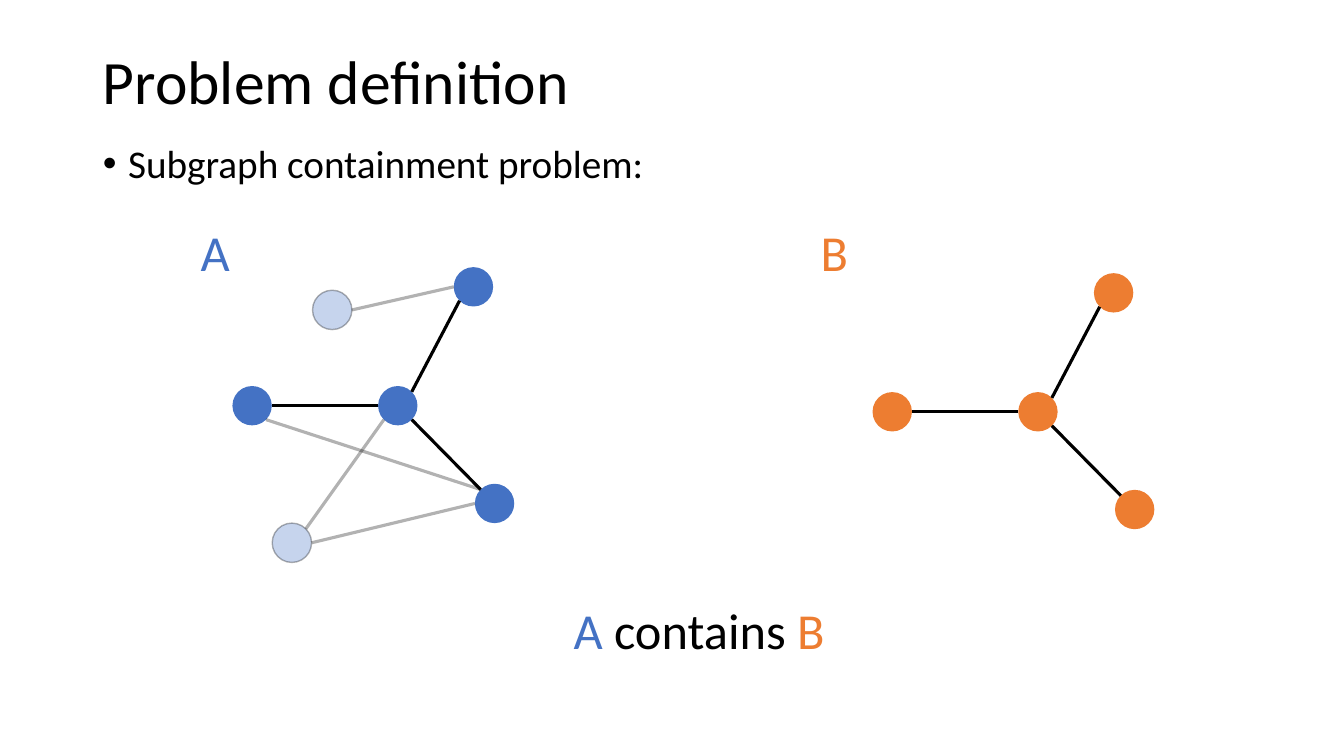
from dataclasses import dataclass
from math import sqrt

from lxml import etree
from pptx import Presentation
from pptx import util as u
from pptx.dml.color import RGBColor
from pptx.enum import shapes, text
from pptx.oxml.ns import qn


@dataclass(frozen=True)
class Theme:
    """Colours, type sizes and line weights of the slide."""
    font: str = "Calibri"
    ink: str = "000000"
    a: str = "4472C4"
    b: str = "ED7D31"
    title: int = 44
    body: int = 28
    label: int = 36
    edge: float = 2.25
    outline: float = 1
    faint: int = 30
    node: float = 2.93


LEAVES = {"hub": (0, 0), "down": (7.2, 12.93), "left": (-10.84, 0), "up": (5.63, -15.73)}
EXTRAS = {"low": (-7.88, 18.13), "high": (-4.88, -12.67)}
STAR_EDGES = [("hub", "NE", "up", "SW"), ("hub", "SE", "down", "NW"), ("left", "E", "hub", "W")]
EXTRA_EDGES = [("hub", "SW", "low", "NE"), ("down", "W", "low", "E"),
               ("left", "SE", "down", "NW"), ("high", "E", "up", "W")]
DIRECTIONS = {"E": (1, 0), "W": (-1, 0), "NE": (1, -1), "SE": (1, 1), "SW": (-1, 1), "NW": (-1, -1)}


def assign(target, values):
    """Set each named attribute on the target."""
    for name, value in values.items():
        setattr(target, name, value)


def fade(fill, percent):
    """Give a solid fill the stated opacity."""
    color = fill._xPr.find(qn("a:solidFill"))[0]
    etree.SubElement(color, qn("a:alpha"), val=str(percent * 1000))


class Slide:
    """Draws on one slide, with lengths in percent of its width and height."""

    def __init__(self, prs, theme):
        """Add a title-and-content slide."""
        self.prs, self.theme = prs, theme
        self.slide = prs.slides.add_slide(prs.slide_layouts[1])

    def x(self, share):
        """Turn a share of the width into a length."""
        return u.Emu(round(self.prs.slide_width * share / 100))

    def y(self, share):
        """Turn a share of the height into a length."""
        return u.Emu(round(self.prs.slide_height * share / 100))

    def box(self, left, top, width, height):
        """Return the four lengths of a box."""
        return self.x(left), self.y(top), self.x(width), self.y(height)

    def add_runs(self, p, runs, size):
        """Add coloured runs to a paragraph."""
        for words, color in runs:
            r = p.add_run()
            r.text = words
            assign(r.font, {"name": self.theme.font, "size": u.Pt(size), "bold": False})
            r.font.color.rgb = RGBColor.from_string(color)

    def placeholder(self, idx, box, words, size, frame, paragraph):
        """Place, fill and format a template placeholder."""
        sp = self.slide.placeholders[idx]
        assign(sp, dict(zip(("left", "top", "width", "height"), self.box(*box))))
        assign(sp.text_frame, {"auto_size": text.MSO_AUTO_SIZE.NONE, **frame})
        p = sp.text_frame.paragraphs[0]
        assign(p, {"alignment": text.PP_ALIGN.LEFT, "line_spacing": 0.9, **paragraph})
        self.add_runs(p, [(words, self.theme.ink)], size)
        return p

    def title(self, box, words):
        """Fill the title."""
        self.placeholder(0, box, words, self.theme.title,
                         {"vertical_anchor": text.MSO_ANCHOR.MIDDLE}, {})

    def bullet(self, box, words):
        """Fill the body with one bulleted line."""
        p = self.placeholder(1, box, words, self.theme.body,
                             {"vertical_anchor": text.MSO_ANCHOR.TOP}, {"space_before": u.Pt(10)})
        pPr = p._p.get_or_add_pPr()
        pPr.set("marL", str(u.Inches(0.25)))
        pPr.set("indent", str(-u.Inches(0.25)))
        etree.SubElement(pPr, qn("a:buChar"), char="•")

    def label(self, box, runs):
        """Add a text box of coloured runs."""
        tf = self.slide.shapes.add_textbox(*self.box(*box)).text_frame
        assign(tf, {"word_wrap": True, "auto_size": text.MSO_AUTO_SIZE.SHAPE_TO_FIT_TEXT})
        self.add_runs(tf.paragraphs[0], runs, self.theme.label)

    def node(self, center, color, faint):
        """Add a round node about its centre."""
        size = self.x(self.theme.node)
        left, top = self.x(center[0]) - size // 2, self.y(center[1]) - size // 2
        sp = self.slide.shapes.add_shape(shapes.MSO_SHAPE.OVAL, left, top, size, size)
        sp.shadow.inherit = False
        sp.fill.solid()
        sp.fill.fore_color.rgb = RGBColor.from_string(color)
        if faint:
            fade(sp.fill, self.theme.faint)
            self.stroke(sp.line, self.theme.outline, faint)
        else:
            sp.line.fill.background()

    def stroke(self, line, weight, faint):
        """Style a line, faded if faint."""
        line.width = u.Pt(weight)
        line.color.rgb = RGBColor.from_string(self.theme.ink)
        if faint:
            fade(line.fill, self.theme.faint)

    def rim(self, center, direction):
        """Find the point of a node's rim in a compass direction."""
        dx, dy = DIRECTIONS[direction]
        reach = self.x(self.theme.node) / 2 / sqrt(dx * dx + dy * dy)
        return (u.Emu(round(self.x(center[0]) + dx * reach)),
                u.Emu(round(self.y(center[1]) + dy * reach)))

    def edge(self, start, end, faint):
        """Join two rim points by a straight line."""
        sp = self.slide.shapes.add_connector(shapes.MSO_CONNECTOR.STRAIGHT, *start, *end)
        self.stroke(sp.line, self.theme.edge, faint)
        etree.SubElement(sp._element.spPr, qn("a:effectLst"))

    def graph(self, hub, color, offsets, links, faint=False, anchors=()):
        """Draw nodes placed about a hub, then the edges between them."""
        centers = {name: (hub[0] + dx, hub[1] + dy)
                   for name, (dx, dy) in {**dict(anchors), **offsets}.items()}
        for name in offsets:
            self.node(centers[name], color, faint)
        for first, leave, second, arrive in links:
            self.edge(self.rim(centers[first], leave), self.rim(centers[second], arrive), faint)


def main():
    """Build and save the slide."""
    prs = Presentation()
    assign(prs, {"slide_width": u.Inches(13.33), "slide_height": u.Inches(7.5)})
    theme = Theme()
    s = Slide(prs, theme)
    s.title((6.9, 5.33, 86.27, 11.73), "Problem definition")
    s.bullet((6.9, 18.4, 86.27, 7.73), "Subgraph containment problem:")
    hub_a, hub_b = (29.6, 53.67), (77.23, 54.47)
    s.graph(hub_b, theme.b, LEAVES, STAR_EDGES)
    s.graph(hub_a, theme.a, LEAVES, STAR_EDGES)
    s.graph(hub_a, theme.a, EXTRAS, EXTRA_EDGES, faint=True, anchors=LEAVES)
    for left, name, color in ((14.18, "A", theme.a), (60.32, "B", theme.b)):
        s.label((left, 28.53, 4.58, 9.47), [(name, color)])
    s.label((41.94, 78.53, 20.71, 9.47),
            [("A", theme.a), (" contains ", theme.ink), ("B", theme.b)])
    prs.save("out.pptx")


if __name__ == "__main__":
    main()
